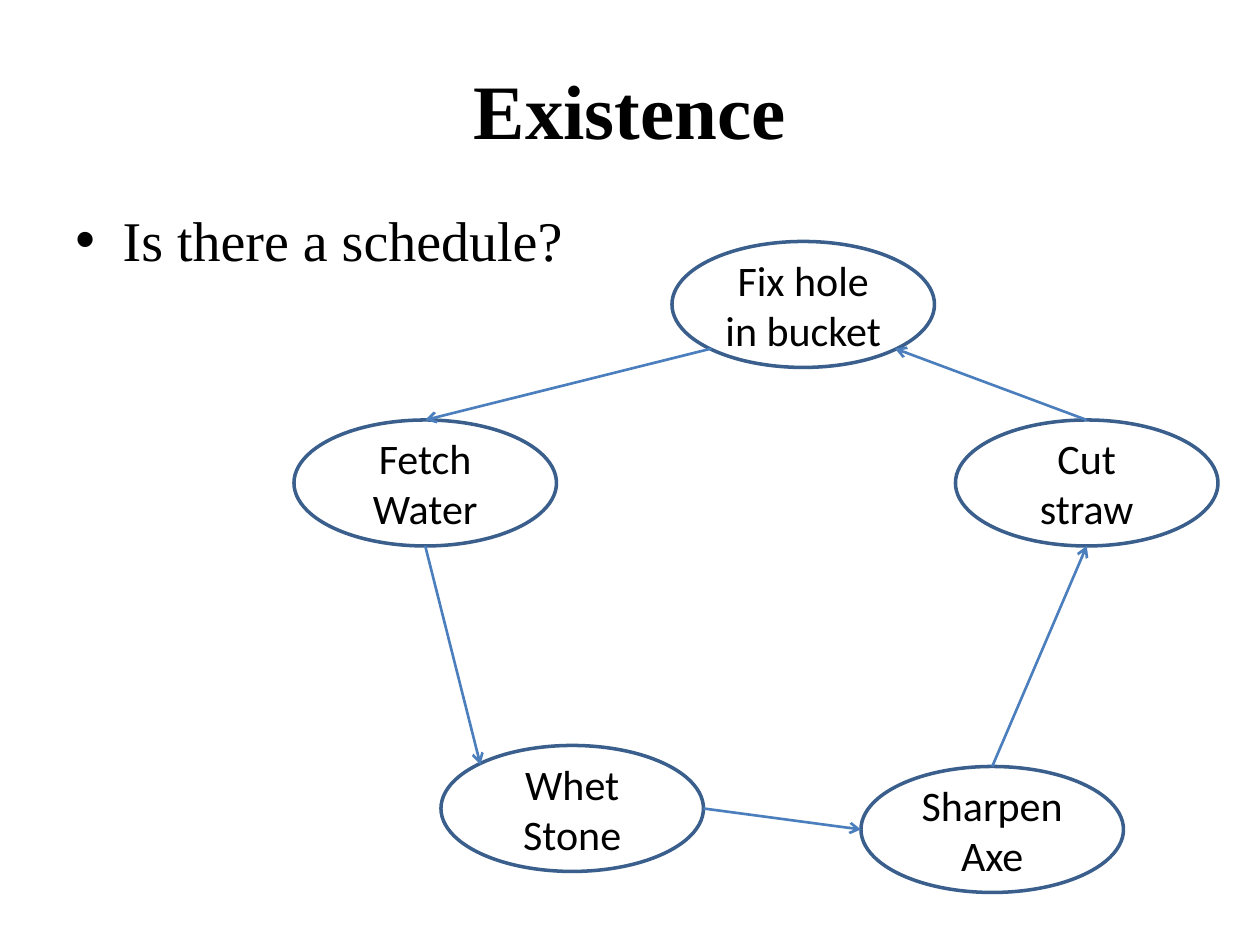
"""Build the "Existence" slide: a cycle of chores, each waiting on another."""
from lxml import etree
from pptx import Presentation
from pptx.dml.color import RGBColor
from pptx.enum.shapes import MSO_CONNECTOR, MSO_SHAPE
from pptx.enum.text import MSO_ANCHOR, PP_ALIGN
from pptx.oxml.ns import qn
from pptx.util import Pt

OVAL = MSO_SHAPE.OVAL
STRAIGHT = MSO_CONNECTOR.STRAIGHT
MIDDLE = MSO_ANCHOR.MIDDLE
LEFT, CENTER = PP_ALIGN.LEFT, PP_ALIGN.CENTER
BLACK = RGBColor(0x00, 0x00, 0x00)
WHITE = RGBColor(0xFF, 0xFF, 0xFF)
OUTLINE = RGBColor(0x3A, 0x5F, 0x8C)
ARROW = RGBColor(0x4B, 0x7E, 0xBC)
SERIF, SANS = "Times New Roman", "Calibri"
TASK_WIDTH, TASK_HEIGHT = 150, 72


def write(frame, text, size, font, align=CENTER, bold=False):
    frame.word_wrap = True
    paragraph = frame.paragraphs[0]
    paragraph.alignment = align
    run = paragraph.add_run()
    run.text = text
    run.font.size = Pt(size)
    run.font.name = font
    run.font.bold = bold
    run.font.color.rgb = BLACK
    return paragraph


prs = Presentation()
prs.slide_width, prs.slide_height = Pt(720), Pt(540)
slide = prs.slides.add_slide(prs.slide_layouts[5])
slide.background.fill.solid()
slide.background.fill.fore_color.rgb = WHITE

heading = slide.shapes.title
heading.left, heading.top, heading.width, heading.height = Pt(36), Pt(21.6), Pt(648), Pt(81)
heading.text_frame.vertical_anchor = MIDDLE
write(heading.text_frame, "Existence", 44, SERIF, bold=True)

question = slide.shapes.add_textbox(Pt(36), Pt(114), Pt(360), Pt(114))
question_line = write(question.text_frame, "Is there a schedule?", 32, SERIF, align=LEFT)
question_line.space_before = Pt(6.4)
bullet_props = question_line._p.get_or_add_pPr()
bullet_props.set("marL", str(Pt(27)))
bullet_props.set("indent", str(-Pt(27)))
etree.SubElement(bullet_props, qn("a:buFont")).set("typeface", "Arial")
etree.SubElement(bullet_props, qn("a:buChar")).set("char", "•")

tasks = {
    "Fix hole in bucket": (384, 138),
    "Fetch Water": (168, 240),
    "Sharpen Axe": (492, 438),
    "Cut straw": (546, 240),
    "Whet Stone": (252, 426),
}
for task, (left, top) in tasks.items():
    bubble = slide.shapes.add_shape(OVAL, Pt(left), Pt(top), Pt(TASK_WIDTH), Pt(TASK_HEIGHT))
    bubble.shadow.inherit = False
    bubble.fill.solid()
    bubble.fill.fore_color.rgb = WHITE
    bubble.line.color.rgb = OUTLINE
    bubble.line.width = Pt(2)
    bubble.text_frame.vertical_anchor = MIDDLE
    write(bubble.text_frame, task, 24, SANS)

rim = {
    "top": (0.5, 0),
    "bottom": (0.5, 1),
    "left": (0, 0.5),
    "right": (1, 0.5),
    "top left": (0.15, 0.15),
    "bottom left": (0.15, 0.85),
    "bottom right": (0.85, 0.85),
}
dependencies = [
    ("Cut straw", "top", "Fix hole in bucket", "bottom right"),
    ("Sharpen Axe", "top", "Cut straw", "bottom"),
    ("Whet Stone", "right", "Sharpen Axe", "left"),
    ("Fetch Water", "bottom", "Whet Stone", "top left"),
    ("Fix hole in bucket", "bottom left", "Fetch Water", "top"),
]
for source, exit_side, target, entry_side in dependencies:
    ends = []
    for task, side in ((source, exit_side), (target, entry_side)):
        left, top = tasks[task]
        across, down = rim[side]
        ends += [Pt(left + across * TASK_WIDTH), Pt(top + down * TASK_HEIGHT)]
    dependency = slide.shapes.add_connector(STRAIGHT, *ends)
    dependency.line.color.rgb = ARROW
    dependency.line.width = Pt(1.5)
    etree.SubElement(dependency.line._get_or_add_ln(), qn("a:tailEnd")).set("type", "arrow")
    etree.SubElement(dependency._element.spPr, qn("a:effectLst"))

prs.save("out.pptx")
